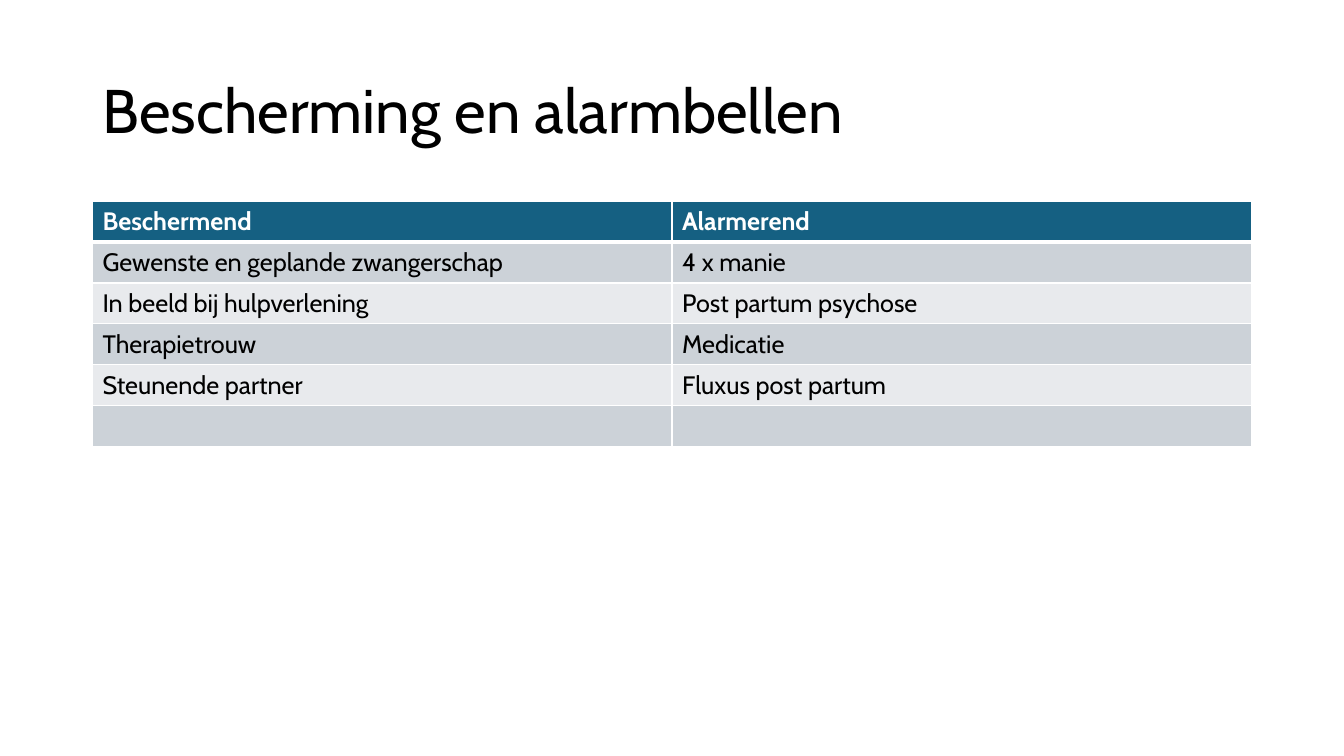
from dataclasses import dataclass

import pptx
import pptx.dml.color
import pptx.enum.text
import pptx.oxml
import pptx.oxml.ns
import pptx.util

Cm = pptx.util.Cm
Pt = pptx.util.Pt


@dataclass(frozen=True)
class Theme:
    font: str = "Cabin"
    title_size: int = 44
    table_size: int = 18
    text: str = "000000"
    header_text: str = "FFFFFF"
    header_fill: str = "156082"
    bands: tuple = ("CCD2D8", "E8EAED")
    border: str = "FFFFFF"
    border_width: int = 1
    header_rule_width: int = 3


THEME = Theme()

ROWS = [
    ("Beschermend", "Alarmerend"),
    ("Gewenste en geplande zwangerschap", "4 x manie"),
    ("In beeld bij hulpverlening", "Post partum psychose"),
    ("Therapietrouw", "Medicatie"),
    ("Steunende partner", "Fluxus post partum"),
    ("", ""),
]


def rgb(color):
    return pptx.dml.color.RGBColor.from_string(color)


def style_paragraph(p, size, color, bold=False):
    p.font.name = THEME.font
    p.font.size = Pt(size)
    p.font.bold = bold
    p.font.color.rgb = rgb(color)


def add_title(slide, text, left, top, width, height):
    tf = slide.shapes.add_textbox(left, top, width, height).text_frame
    tf.word_wrap = True
    tf.vertical_anchor = pptx.enum.text.MSO_ANCHOR.MIDDLE
    p = tf.paragraphs[0]
    p.text = text
    p.line_spacing = 0.9
    style_paragraph(p, THEME.title_size, THEME.text)


def set_border(cell, side, width):
    line = pptx.oxml.parse_xml(
        f'<a:ln{side} {pptx.oxml.ns.nsdecls("a")} w="{Pt(width)}">'
        f'<a:solidFill><a:srgbClr val="{THEME.border}"/></a:solidFill>'
        f'</a:ln{side}>'
    )
    cell._tc.get_or_add_tcPr().append(line)


def fill_cell(cell, text, row):
    header = row == 0
    widths = dict.fromkeys("LRTB", THEME.border_width)
    if header:
        widths["B"] = THEME.header_rule_width
    elif row == 1:
        widths["T"] = THEME.header_rule_width
    for side, width in widths.items():
        set_border(cell, side, width)
    cell.fill.solid()
    band = THEME.bands[(row - 1) % len(THEME.bands)]
    cell.fill.fore_color.rgb = rgb(THEME.header_fill if header else band)
    p = cell.text_frame.paragraphs[0]
    if text:
        p.text = text
    color = THEME.header_text if header else THEME.text
    style_paragraph(p, THEME.table_size, color, bold=header)


def add_table(slide, rows, left, top, width, row_height):
    table = slide.shapes.add_table(
        len(rows), len(rows[0]), left, top, width, row_height * len(rows)
    ).table
    for i, texts in enumerate(rows):
        table.rows[i].height = row_height
        for j, text in enumerate(texts):
            fill_cell(table.cell(i, j), text, i)


def main():
    prs = pptx.Presentation()
    prs.slide_width, prs.slide_height = Cm(33.87), Cm(19.05)
    slide = prs.slides.add_slide(prs.slide_layouts[6])
    left, width = Cm(2.33), Cm(29.21)
    add_title(slide, "Bescherming en alarmbellen", left, Cm(1.01), width, Cm(3.68))
    add_table(slide, ROWS, left, Cm(5.07), width, Cm(1.03))
    prs.save("out.pptx")


if __name__ == "__main__":
    main()
